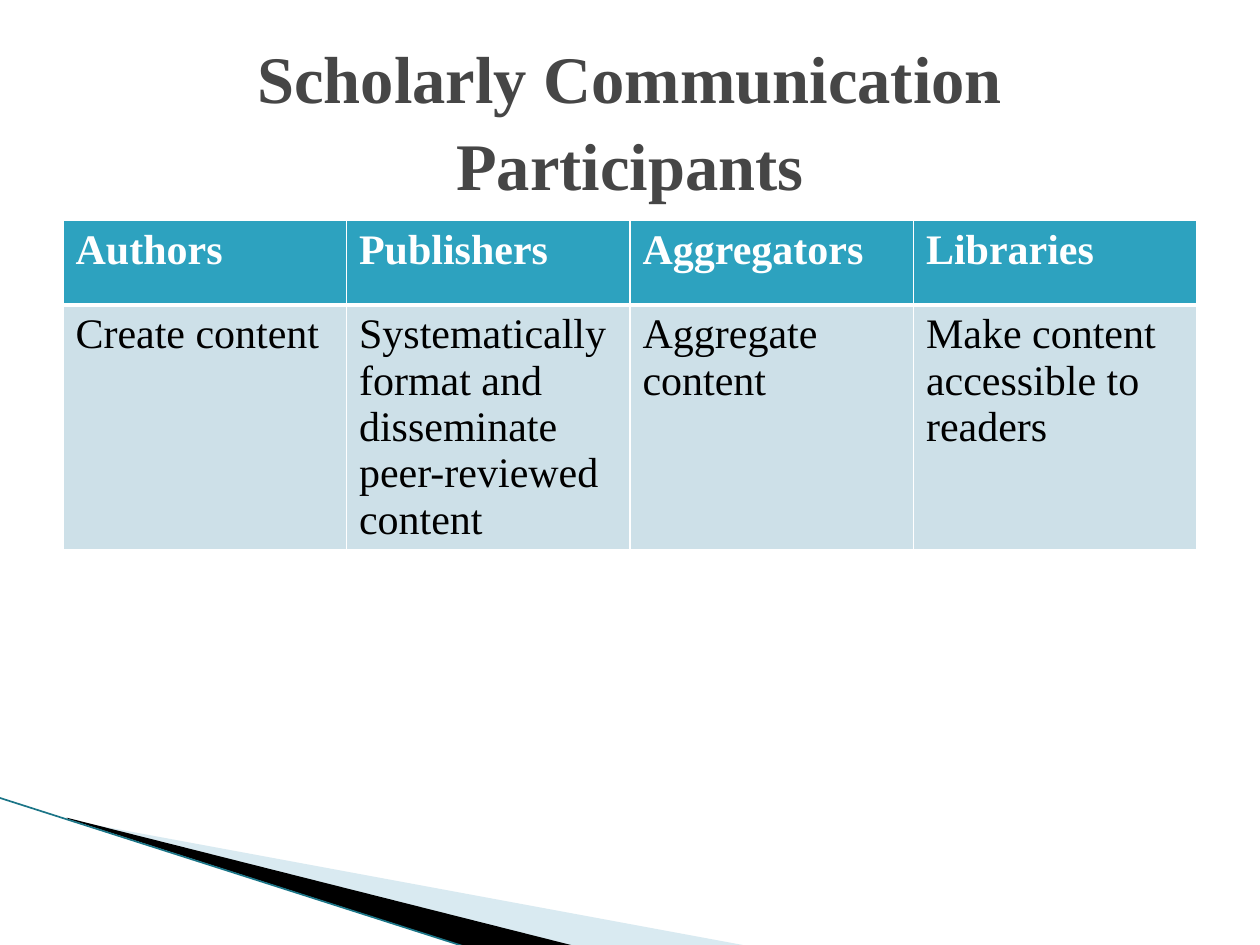
from lxml.etree import SubElement as Sub
from pptx import Presentation
from pptx.dml.color import RGBColor as RGB
from pptx.enum.text import MSO_ANCHOR as Anchor, PP_ALIGN as Align
from pptx.oxml.ns import qn
from pptx.util import Pt

PX = 9144  # 100 px to the inch
FONT = "Times New Roman"
WHITE = RGB(255, 255, 255)
BLACK = RGB(0, 0, 0)
GREY = RGB(0x46, 0x46, 0x46)
TEAL = RGB(0x2D, 0xA2, 0xBF)
DEEP = RGB(0x1B, 0x75, 0x87)
PALE = RGB(0xCD, 0xE0, 0xE8)
MIST = RGB(0xA0, 0xCB, 0xDC)

ROWS = [
    ["Authors", "Publishers", "Aggregators", "Libraries"],
    ["Create content",
     "Systematically format and disseminate peer-reviewed content",
     "Aggregate content",
     "Make content accessible to readers"],
]


class Deck:
    def __init__(self, wide, high):
        self.prs = Presentation()
        self.prs.slide_width, self.prs.slide_height = wide * PX, high * PX
        self.slide = self.prs.slides.add_slide(self.prs.slide_layouts[5])

    def add_text(self, para, text, size, color, bold):
        run = para.add_run()
        run.text = text
        font = run.font
        font.name, font.size, font.bold = FONT, Pt(size), bold
        font.color.rgb = color

    def title(self, text, x, y, w, h):
        box = self.slide.shapes.title
        box.left, box.top, box.width, box.height = (v * PX for v in (x, y, w, h))
        frame = box.text_frame
        frame.word_wrap = True
        frame.vertical_anchor = Anchor.MIDDLE
        frame.margin_left = frame.margin_right = 20 * PX
        para = frame.paragraphs[0]
        para.alignment, para.line_spacing = Align.CENTER, 1.09
        self.add_text(para, text, 38, GREY, True)

    def wedge(self, points, color, alpha=100):
        pen = self.slide.shapes.build_freeform(*points[0], scale=PX)
        pen.add_line_segments(points[1:], close=True)
        shape = pen.convert_to_shape()
        shape.shadow.inherit = False
        shape.line.fill.background()
        shape.fill.solid()
        shape.fill.fore_color.rgb = color
        if alpha < 100:
            tint = shape._element.spPr.find(qn("a:solidFill"))[0]
            Sub(tint, qn("a:alpha"), val=str(alpha * 1000))

    def line(self, x1, y1, x2, y2, color, width):
        line = self.slide.shapes.add_connector(
            1, x1 * PX, y1 * PX, x2 * PX, y2 * PX)
        line.line.color.rgb, line.line.width = color, Pt(width)
        Sub(line._element.spPr, qn("a:effectLst"))

    def edge(self, cell, side, width):
        props = cell._tc.get_or_add_tcPr()
        rule = Sub(props, qn("a:ln" + side), w=str(Pt(width)))
        fill = Sub(rule, qn("a:solidFill"))
        Sub(fill, qn("a:srgbClr"), val=str(WHITE))

    def table(self, rows, x, y, w, highs):
        grid = self.slide.shapes.add_table(
            len(rows), len(rows[0]), x * PX, y * PX, w * PX, sum(highs) * PX).table
        for r, texts in enumerate(rows):
            grid.rows[r].height = highs[r] * PX
            head = r == 0
            for c, text in enumerate(texts):
                cell = grid.cell(r, c)
                # Borders come before the fill in the cell properties
                for side in "LRTB":
                    heavy = side == ("B" if head else "T")
                    self.edge(cell, side, 3 if heavy else 1)
                cell.fill.solid()
                cell.fill.fore_color.rgb = TEAL if head else PALE
                self.add_text(cell.text_frame.paragraphs[0], text, 24,
                              WHITE if head else BLACK, head)


def main():
    deck = Deck(1000, 750)

    # Corner sweep
    deck.wedge([(55, 651), (595, 751), (456, 751), (55, 650)], MIST, 40)
    deck.wedge([(53, 649), (457, 751), (372, 752), (54, 650)], BLACK)
    deck.line(-1, 633, 371, 752, DEEP, 0.95)

    # Heading and participants
    deck.table(ROWS, 50, 175, 900, [67, 194])
    deck.title("Scholarly Communication Participants", 50, 30, 900, 125)

    deck.prs.save("out.pptx")


if __name__ == "__main__":
    main()
